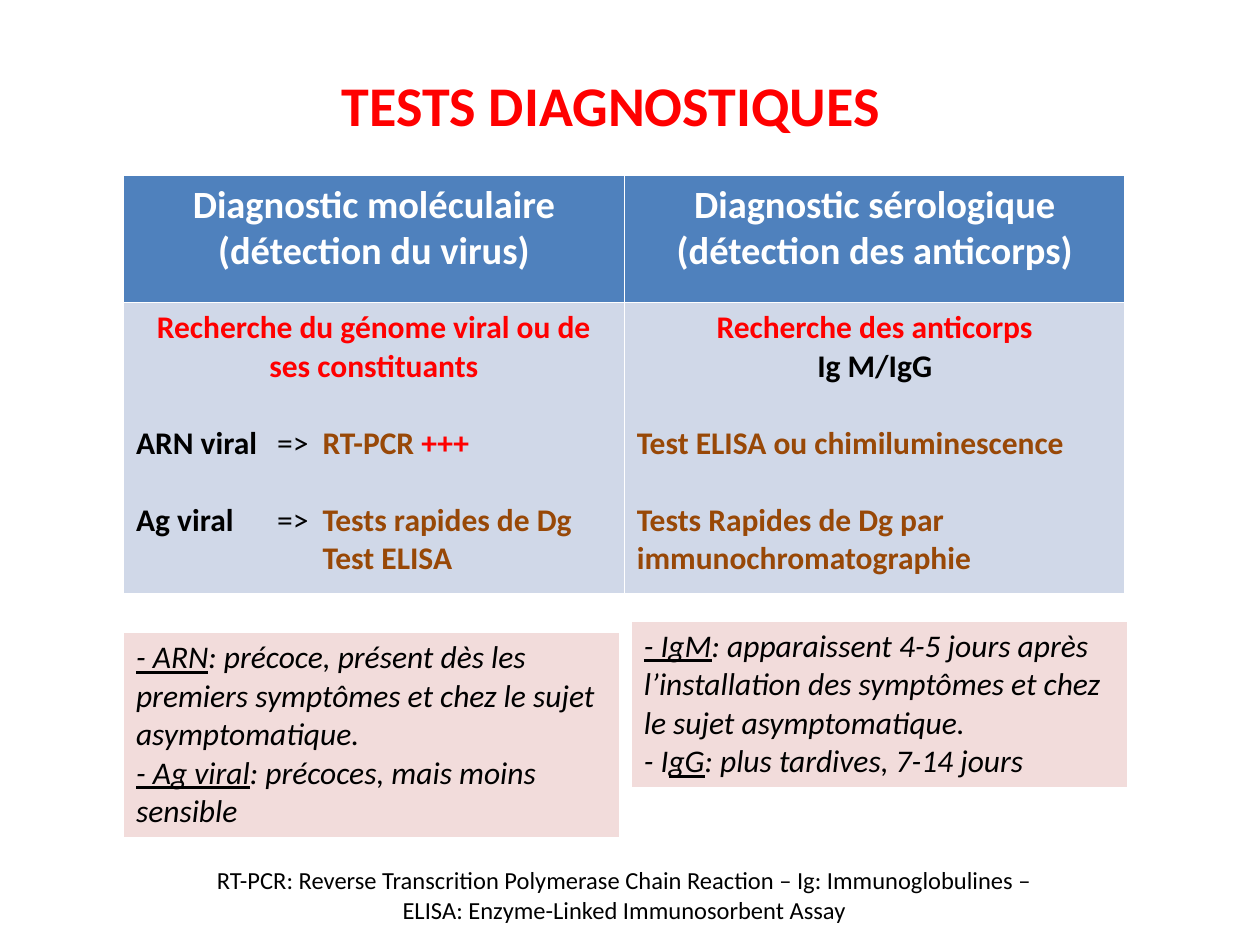
import pptx
import pptx.util
import pptx.dml.color
import pptx.enum.text
import pptx.oxml
import pptx.oxml.ns

Inches, Pt = pptx.util.Inches, pptx.util.Pt
CENTER = pptx.enum.text.PP_ALIGN.CENTER
LEFT = pptx.enum.text.PP_ALIGN.LEFT
RED, BLACK, WHITE, BROWN = "FF0000", "000000", "FFFFFF", "984807"
HEADER_BLUE, BODY_BLUE, PINK = "4F81BD", "D0D8E8", "F2DCDB"
ARROW_TAB, TEST_TAB = Inches(1.12), Inches(1.48)


def color(hex_value):
    return pptx.dml.color.RGBColor.from_string(hex_value)


def fill_cell(cell, hex_value):
    cell.fill.solid()
    cell.fill.fore_color.rgb = color(hex_value)


def add_tabs(paragraph, *positions):
    tabs = pptx.oxml.parse_xml(f"<a:tabLst {pptx.oxml.ns.nsdecls('a')}/>")
    for position in positions:
        tab = tabs.makeelement(pptx.oxml.ns.qn("a:tab"), {"pos": str(position), "algn": "l"})
        tabs.append(tab)
    paragraph._p.get_or_add_pPr().append(tabs)


def write_paragraph(frame, index, runs, size, hex_value=None, bold=None, italic=None,
                    align=LEFT, gap=0, tabs=()):
    paragraph = frame.paragraphs[0] if index == 0 else frame.add_paragraph()
    paragraph.alignment = align
    if gap:
        paragraph.space_before = Pt(gap)
    if tabs:
        add_tabs(paragraph, *tabs)
    font = paragraph.font
    font.name, font.size, font.bold, font.italic = "Calibri", Pt(size), bold, italic
    if hex_value:
        font.color.rgb = color(hex_value)
    for text, style in runs:
        run = paragraph.add_run()
        run.text = text
        if "color" in style:
            run.font.color.rgb = color(style["color"])
        if "bold" in style:
            run.font.bold = style["bold"]
        if "underline" in style:
            run.font.underline = style["underline"]


def place_title(slide, left, top, width, height):
    title = slide.shapes.title
    title.left, title.top, title.width, title.height = map(Inches, (left, top, width, height))
    title.text_frame.vertical_anchor = pptx.enum.text.MSO_ANCHOR.MIDDLE
    write_paragraph(title.text_frame, 0, [("TESTS DIAGNOSTIQUES", {})], 32, RED, True, align=CENTER)


def add_diagnostics(slide, left, top, width, height):
    table = slide.shapes.add_table(2, 2, *map(Inches, (left, top, width, height))).table
    table.rows[0].height = Inches(1.01)
    table.rows[1].height = Inches(height - 1.01)
    headers = [
        ("Diagnostic moléculaire", "(détection du virus)"),
        ("Diagnostic sérologique", "(détection des anticorps)"),
    ]
    black, brown, red = {"color": BLACK}, {"color": BROWN}, {"color": RED}
    arrow = ("\t=>", {"color": BLACK, "bold": False})
    centered = {"align": CENTER}
    spaced = {"gap": 22}
    tabbed = {"gap": 22, "tabs": (ARROW_TAB, TEST_TAB)}
    bodies = [
        [
            ([("Recherche du génome viral ou de ses constituants", red)], centered),
            ([("ARN viral", black), arrow, ("\tRT-PCR ", brown), ("+++", red)], tabbed),
            ([("Ag viral", black), arrow, ("\tTests rapides de Dg", brown)], tabbed),
            ([("\tTest ELISA", brown)], {"tabs": (TEST_TAB,)}),
        ],
        [
            ([("Recherche des anticorps", red)], centered),
            ([("Ig M/IgG", black)], centered),
            ([("Test ELISA ou chimiluminescence", brown)], spaced),
            ([("Tests Rapides de Dg par immunochromatographie", brown)], spaced),
        ],
    ]
    for column, (header, body) in enumerate(zip(headers, bodies)):
        header_cell, body_cell = table.cell(0, column), table.cell(1, column)
        fill_cell(header_cell, HEADER_BLUE)
        fill_cell(body_cell, BODY_BLUE)
        for index, line in enumerate(header):
            write_paragraph(header_cell.text_frame, index, [(line, {})], 22, WHITE, True, align=CENTER)
        for index, (runs, layout) in enumerate(body):
            write_paragraph(body_cell.text_frame, index, runs, 18, bold=True, **layout)


def add_note(slide, left, top, width, height, lines):
    table = slide.shapes.add_table(1, 1, *map(Inches, (left, top, width, height))).table
    table.first_row = False
    cell = table.cell(0, 0)
    fill_cell(cell, PINK)
    for index, (lead, term, explanation) in enumerate(lines):
        runs = [(lead, {})] if lead else []
        runs += [(term, {"underline": True}), (explanation, {})]
        write_paragraph(cell.text_frame, index, runs, 18, BLACK, False, True)


def add_abbreviations(slide, left, top, width, height):
    frame = slide.shapes.add_textbox(*map(Inches, (left, top, width, height))).text_frame
    frame.word_wrap = True
    lines = [
        "RT-PCR: Reverse Transcrition Polymerase Chain Reaction – Ig: Immunoglobulines –",
        "ELISA: Enzyme-Linked Immunosorbent Assay",
    ]
    for index, line in enumerate(lines):
        write_paragraph(frame, index, [(line, {})], 14, BLACK, align=CENTER)


def main():
    presentation = pptx.Presentation()
    presentation.slide_width, presentation.slide_height = Inches(10), Inches(7.5)
    slide = presentation.slides.add_slide(presentation.slide_layouts[5])
    place_title(slide, 0.35, 0.44, 9, 0.77)
    add_diagnostics(slide, 0.98, 1.39, 7.95, 3.32)
    add_note(slide, 0.98, 5.02, 3.94, 1.6, [
        ("", "- ARN", ": précoce, présent dès les premiers symptômes et chez le sujet asymptomatique."),
        ("", "- Ag viral", ": précoces, mais moins sensible"),
    ])
    add_note(slide, 5.01, 4.93, 3.94, 1.3, [
        ("", "- IgM", ": apparaissent 4-5 jours après l’installation des symptômes et chez le sujet asymptomatique."),
        ("- I", "gG", ": plus tardives, 7-14 jours"),
    ])
    add_abbreviations(slide, 0.98, 6.82, 7.95, 0.57)
    presentation.save("out.pptx")


if __name__ == "__main__":
    main()
